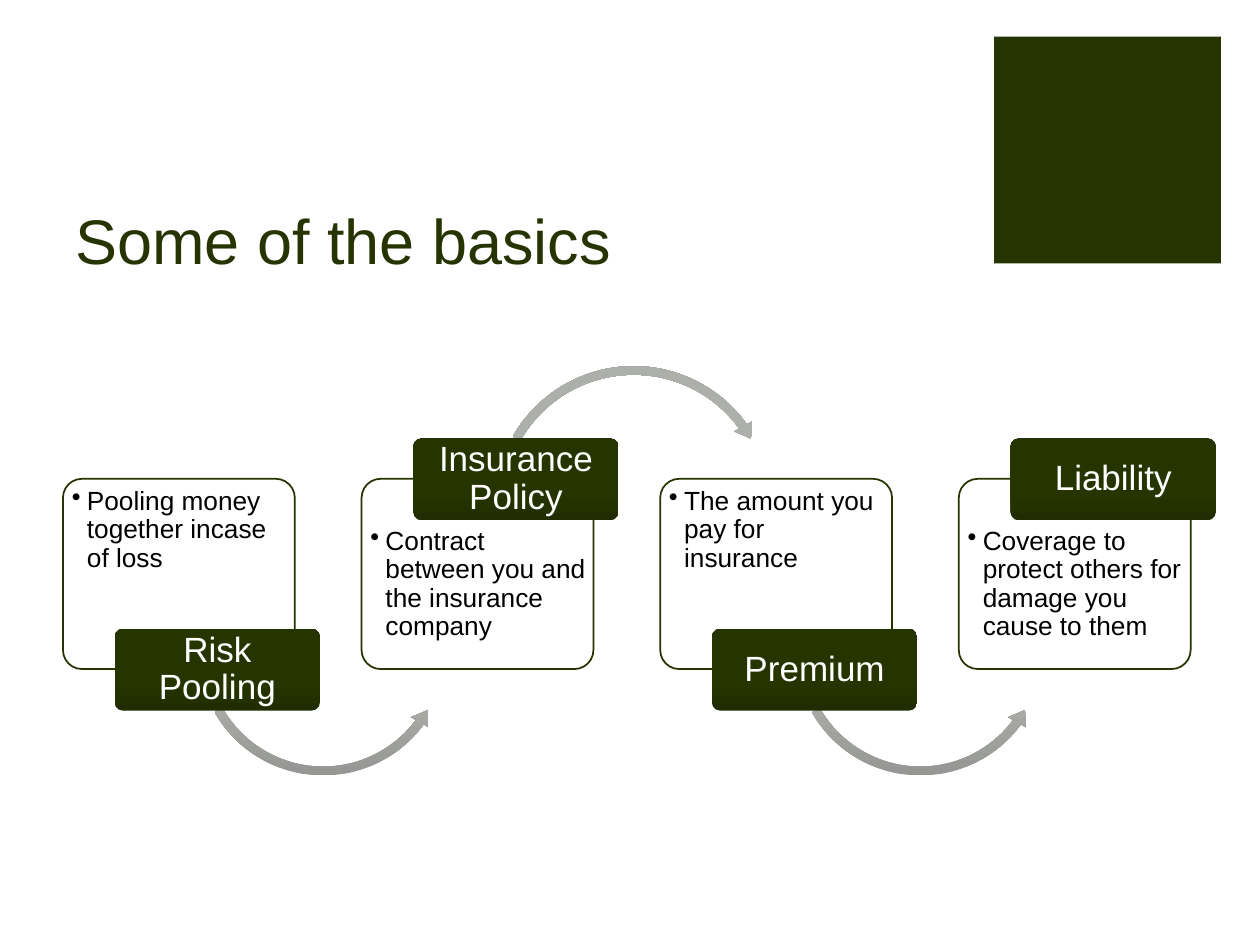
"""Build the insurance basics slide: four linked cards under a title."""
from dataclasses import dataclass

from lxml import etree
from pptx import Presentation
from pptx.dml.color import RGBColor
from pptx.enum.shapes import MSO_SHAPE
from pptx.enum.text import MSO_ANCHOR, PP_ALIGN
from pptx.oxml import parse_xml
from pptx.oxml.ns import nsdecls, qn
from pptx.util import Inches, Pt

RECT, ROUND = MSO_SHAPE.RECTANGLE, MSO_SHAPE.ROUNDED_RECTANGLE
ARC_OVER, ARC_UNDER = MSO_SHAPE.CIRCULAR_ARROW, MSO_SHAPE.LEFT_CIRCULAR_ARROW
TOP, MIDDLE, BOTTOM = MSO_ANCHOR.TOP, MSO_ANCHOR.MIDDLE, MSO_ANCHOR.BOTTOM
LEFT, CENTER = PP_ALIGN.LEFT, PP_ALIGN.CENTER

FONT = "Arial"
GREEN, WHITE, BLACK = "263401", "FFFFFF", "000000"
LABEL_GRADIENT = ("212D00", "263500", "263500", "263500")
ARROW_GRADIENT = ("949592", "ADAFAA", "ADAFAA", "ADB0A9")
STOPS = (0, 35, 70, 100)
CARD_LEFT, CARD_TOP, PITCH = 0.5, 3.8, 2.37
UNDER_ADJ = (0.034, 4.15, 21.905, 90.245, 0.039)
OVER_ADJ = (0.03, 3.697, 194.548, 125.755, 0.035)


@dataclass
class Card:
    """A term and its meaning, with the term above or below."""
    term: str
    meaning: str
    term_above: bool


CARDS = [
    Card("Risk Pooling", "Pooling money together incase of loss", False),
    Card("Insurance Policy", "Contract between you and the insurance company", True),
    Card("Premium", "The amount you pay for insurance", False),
    Card("Liability", "Coverage to protect others for damage you cause to them", True),
]


def rgb(value: str) -> RGBColor:
    """Turn a hex string into a colour."""
    return RGBColor.from_string(value)


def add_shape(s, kind, x: float, y: float, w: float, h: float, *,
              fill=None, line=None, gradient=None, adj=()):
    """Draw a preset shape with a solid or upward gradient fill."""
    sp = s.shapes.add_shape(kind, Inches(x), Inches(y), Inches(w), Inches(h))
    sp.shadow.inherit = False
    for i, value in enumerate(adj):
        sp.adjustments[i] = value
    if fill:
        sp.fill.solid()
        sp.fill.fore_color.rgb = rgb(fill)
    if gradient:
        stops = "".join(
            f'<a:gs pos="{pos * 1000}"><a:srgbClr val="{color}"/></a:gs>'
            for pos, color in zip(STOPS, gradient))
        sp._element.spPr.find(qn("a:prstGeom")).addnext(parse_xml(
            f'<a:gradFill {nsdecls("a")} rotWithShape="1"><a:gsLst>{stops}</a:gsLst>'
            '<a:lin ang="16200000" scaled="0"/></a:gradFill>'))
    if line:
        sp.line.color.rgb = rgb(line)
        sp.line.width = Pt(1)
    else:
        sp.line.fill.background()
    return sp


def add_text(s, text: str, x: float, y: float, w: float, h: float, *, size: int,
             color: str, align=LEFT, anchor=TOP, inset=(0.1, 0.05),
             spacing=None, bullet=False):
    """Place one paragraph in a wrapping text box."""
    tf = s.shapes.add_textbox(Inches(x), Inches(y), Inches(w), Inches(h)).text_frame
    tf.word_wrap = True
    tf.vertical_anchor = anchor
    tf.margin_left = tf.margin_right = Inches(inset[0])
    tf.margin_top = tf.margin_bottom = Inches(inset[1])
    p = tf.paragraphs[0]
    p.alignment = align
    if spacing:
        p.line_spacing = spacing
    if bullet:
        pPr = p._p.get_or_add_pPr()
        pPr.set("marL", str(Inches(0.12)))
        pPr.set("indent", str(Inches(-0.12)))
        etree.SubElement(pPr, qn("a:buChar")).set("char", "•")
    r = p.add_run()
    r.text = text
    r.font.name, r.font.size, r.font.color.rgb = FONT, Pt(size), rgb(color)


def add_card(s, card: Card, x: float, linked: bool) -> None:
    """Draw a card, the arrow to the next one, and its label."""
    box = add_shape(s, ROUND, x, CARD_TOP, 1.84, 1.51, fill=WHITE, line=GREEN, adj=(0.1,))
    color = box._element.spPr.find(qn("a:solidFill"))[0]
    etree.SubElement(color, qn("a:alpha")).set("val", "90000")
    add_text(s, card.meaning, x + 0.04, 4.16 if card.term_above else 3.84, 1.77, 1.12,
             size=15, color=BLACK, inset=(0.03, 0.03), spacing=0.9, bullet=True)
    if linked and card.term_above:
        add_shape(s, ARC_OVER, x + 1.01, 2.86, 2.3, 2.3,
                  gradient=ARROW_GRADIENT, adj=OVER_ADJ)
    elif linked:
        add_shape(s, ARC_UNDER, x + 1.03, 4.13, 2.07, 2.07,
                  gradient=ARROW_GRADIENT, adj=UNDER_ADJ)
    y = 3.48 if card.term_above else 4.99
    add_shape(s, ROUND, x + 0.41, y, 1.63, 0.65, gradient=LABEL_GRADIENT, adj=(0.1,))
    add_text(s, card.term, x + 0.43, y + 0.02, 1.59, 0.61, size=20, color=WHITE,
             align=CENTER, anchor=MIDDLE, inset=(0.04, 0.03), spacing=0.9)


def main() -> None:
    """Build and save the slide."""
    prs = Presentation()
    prs.slide_width, prs.slide_height = Inches(10), Inches(7.5)
    s = prs.slides.add_slide(prs.slide_layouts[6])
    add_shape(s, RECT, 7.89, 0.29, 1.8, 1.8, fill=GREEN)
    add_text(s, "Some of the basics", 0.5, 1, 7.12, 1.25,
             size=36, color=GREEN, anchor=BOTTOM)
    for i, card in enumerate(CARDS):
        add_card(s, card, CARD_LEFT + i * PITCH, linked=i < len(CARDS) - 1)
    prs.save("out.pptx")


if __name__ == "__main__":
    main()
